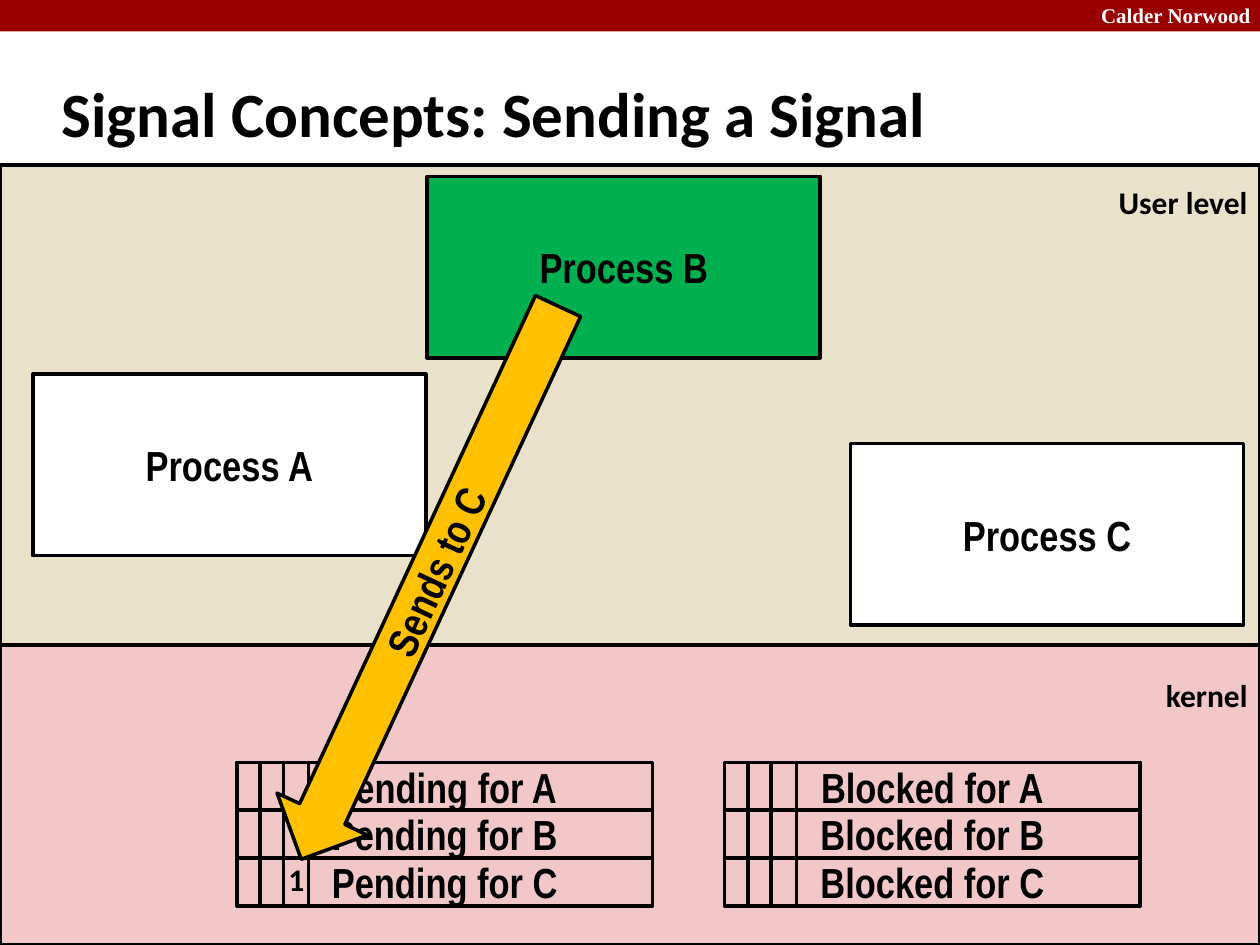
"""Builds a slide that shows one process sending a signal to another through the kernel."""
from dataclasses import dataclass

from lxml.etree import SubElement
from pptx import Presentation
from pptx.dml.color import RGBColor
from pptx.enum.shapes import MSO_CONNECTOR, MSO_SHAPE
from pptx.enum.text import MSO_ANCHOR, PP_ALIGN
from pptx.oxml.ns import qn
from pptx.util import Inches, Pt


@dataclass(frozen=True)
class Theme:
    ink: str = "000000"
    paper: str = "FFFFFF"
    banner: str = "990000"
    user: str = "E9E1C9"
    kernel: str = "F1C7C7"
    sender: str = "00B050"
    arrow: str = "FFC000"
    body_font: str = "Calibri"
    shape_font: str = "Arial Narrow"
    banner_font: str = "Times New Roman"
    title_size: int = 36
    shape_size: int = 24
    label_size: int = 18
    banner_size: int = 12
    line_width: int = 2


class SlideBuilder:
    """Draws themed elements on a grid of 100 columns by 75 rows."""

    def __init__(self, presentation, theme):
        self.theme = theme
        self.column = presentation.slide_width / 100
        self.row = presentation.slide_height / 75
        self.slide = presentation.slides.add_slide(presentation.slide_layouts[5])

    def place(self, left, top, width, height):
        return (round(left * self.column), round(top * self.row),
                round(width * self.column), round(height * self.row))

    def add_text(self, frame, text, font, size, color=None, align=PP_ALIGN.LEFT):
        paragraph = frame.paragraphs[0]
        paragraph.alignment = align
        run = paragraph.add_run()
        run.text = text
        run.font.name = font
        run.font.size = Pt(size)
        run.font.bold = True
        run.font.color.rgb = RGBColor.from_string(color or self.theme.ink)
        return paragraph

    def title(self, text, area):
        shape = self.slide.shapes.title
        shape.left, shape.top, shape.width, shape.height = self.place(*area)
        frame = shape.text_frame
        frame.vertical_anchor = MSO_ANCHOR.MIDDLE
        paragraph = self.add_text(frame, text, self.theme.body_font, self.theme.title_size)
        properties = paragraph._p.get_or_add_pPr()
        properties.set("marL", str(Inches(0.13)))
        properties.set("indent", str(Inches(-0.13)))

    def label(self, text, area, font=None, size=None, color=None, align=PP_ALIGN.LEFT):
        frame = self.slide.shapes.add_textbox(*self.place(*area)).text_frame
        frame.word_wrap = True
        self.add_text(frame, text, font or self.theme.body_font,
                      size or self.theme.label_size, color, align)

    def box(self, area, fill=None, text="", kind=MSO_SHAPE.RECTANGLE, outlined=True):
        shape = self.slide.shapes.add_shape(kind, *self.place(*area))
        shape.shadow.inherit = False
        if fill:
            shape.fill.solid()
            shape.fill.fore_color.rgb = RGBColor.from_string(fill)
        else:
            shape.fill.background()
        if outlined:
            shape.line.color.rgb = RGBColor.from_string(self.theme.ink)
            shape.line.width = Pt(self.theme.line_width)
        else:
            shape.line.fill.background()
        if text:
            frame = shape.text_frame
            frame.vertical_anchor = MSO_ANCHOR.MIDDLE
            self.add_text(frame, text, self.theme.shape_font, self.theme.shape_size,
                          align=PP_ALIGN.CENTER)
        return shape

    def divider(self, column, top, bottom):
        left, start, _, height = self.place(column, top, 0, bottom - top)
        line = self.slide.shapes.add_connector(
            MSO_CONNECTOR.STRAIGHT, left, start, left, start + height)
        line.line.color.rgb = RGBColor.from_string(self.theme.ink)
        line.line.width = Pt(self.theme.line_width)
        SubElement(line._element.spPr, qn("a:effectLst"))

    def signal_table(self, name, left, top, row_height):
        for index, process in enumerate("ABC"):
            self.box((left, top + index * row_height, 33, row_height),
                     text=f"{name} for {process}")
        for offset in (1.85, 3.7, 5.7):
            self.divider(left + offset, top, top + 3 * row_height)

    def signal_arrow(self, text, area, rotation):
        shape = self.box(area, self.theme.arrow, text, MSO_SHAPE.RIGHT_ARROW)
        shape.rotation = rotation
        shape._element.spPr.find(qn("a:xfrm")).set("flipV", "1")


def main():
    theme = Theme()
    presentation = Presentation()
    presentation.slide_width, presentation.slide_height = Inches(10), Inches(7.5)
    builder = SlideBuilder(presentation, theme)

    builder.box((0, 0, 100, 2.5), theme.banner, outlined=False)
    builder.label("Calder Norwood", (86.4, -0.3, 14.3, 3), theme.banner_font,
                  theme.banner_size, theme.paper)
    builder.title("Signal Concepts: Sending a Signal", (3.9, 4.8, 83, 8.3))

    builder.box((0, 13.1, 100, 39.2), theme.user)
    processes = (("A", 2.6, 29.7, theme.paper),
                 ("B", 33.9, 14, theme.sender),
                 ("C", 67.5, 35.2, theme.paper))
    for name, left, top, fill in processes:
        builder.box((left, top, 31.2, 14.4), fill, f"Process {name}")
    builder.box((0, 51.2, 100, 23.8), theme.kernel)
    for text, top in (("kernel", 53.2), ("User level", 14)):
        builder.label(text, (80, top, 20, 4), align=PP_ALIGN.RIGHT)

    for name, left in (("Pending", 18.8), ("Blocked", 57.5)):
        builder.signal_table(name, left, 60.5, 3.8)
    builder.label("1", (21.9, 67.8, 2.2, 4))
    builder.signal_arrow("Sends to C", (9.9, 42.3, 48.4, 7.9), 114.9)

    presentation.save("out.pptx")


if __name__ == "__main__":
    main()
